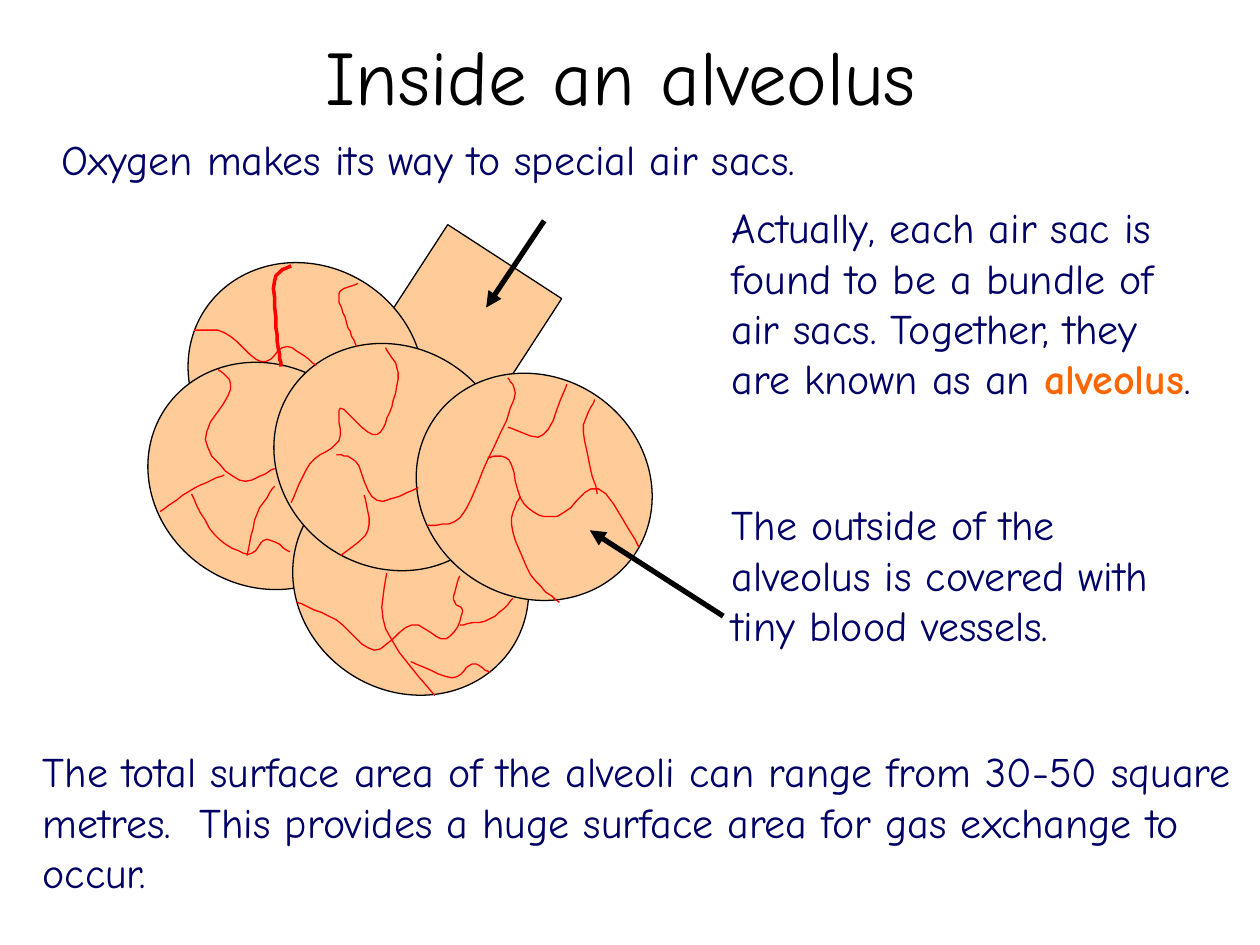
from lxml import etree
from pptx import Presentation
from pptx.dml.color import RGBColor
from pptx.enum.shapes import MSO_CONNECTOR, MSO_SHAPE
from pptx.enum.text import MSO_ANCHOR, MSO_AUTO_SIZE, PP_ALIGN
from pptx.oxml.ns import qn
from pptx.util import Cm, Pt

STRAIGHT = MSO_CONNECTOR.STRAIGHT
RECTANGLE, OVAL = MSO_SHAPE.RECTANGLE, MSO_SHAPE.OVAL
TOP, MIDDLE = MSO_ANCHOR.TOP, MSO_ANCHOR.MIDDLE
LEFT, CENTER = PP_ALIGN.LEFT, PP_ALIGN.CENTER
FIT_TEXT, FIXED = MSO_AUTO_SIZE.SHAPE_TO_FIT_TEXT, MSO_AUTO_SIZE.NONE

BLACK = RGBColor(0x00, 0x00, 0x00)
NAVY = RGBColor(0x01, 0x00, 0x66)
ORANGE = RGBColor(0xFF, 0x66, 0x00)
SKIN = RGBColor(0xFF, 0xCC, 0x99)
RED = RGBColor(0xFF, 0x00, 0x00)
FONT = "Comic Neue"
TILT = 33

# Boxes and points are in centimetres.
TITLE = ("Inside an alveolus", (1.09, -0.08, 22.86, 3.18))
INTRO = ("Oxygen makes its way to special air sacs.", (0.99, 2.57, 16.81, 1.3))
NOTES = [
    ("Actually, each air sac is found to be a bundle of air sacs. "
     "Together, they are known as an *alveolus*.", (14.5, 3.94, 9.8, 5.38)),
    ("The total surface area of the alveoli can range from 30-50 square metres.  "
     "This provides a huge surface area for gas exchange to occur.",
     (0.61, 14.91, 24.61, 3.33)),
    ("The outside of the alveolus is covered with tiny blood vessels.",
     (14.5, 9.93, 9.96, 3.33)),
]
AIRWAY = (7.54, 4.9, 2.74, 4.65)
SAC_SIZE = (4.88, 4.45)
SACS = [(3.73, 5.36), (2.92, 7.37), (5.84, 9.5), (5.46, 6.99), (8.33, 7.59)]
ARROWS = [((10.97, 4.45), (9.8, 6.2)), ((14.58, 12.42), (11.89, 10.69))]

# Points along each blood vessel, in units of VESSEL_UNIT; the first is the thick one.
VESSEL_UNIT = Cm(0.0254)
THICK, THIN = 2, 0.75
VESSELS = [
    [(231, 211), (218, 223), (220, 266), (223, 291)],
    [(154, 262), (178, 264), (207, 287), (228, 275), (251, 290)],
    [(284, 225), (269, 233), (275, 256), (283, 275)],
    [(306, 276), (316, 296), (309, 328), (296, 345), (270, 324), (269, 350),
     (246, 368), (231, 399)],
    [(267, 361), (282, 366), (299, 397), (332, 387)],
    [(270, 441), (292, 421), (289, 393)],
    [(173, 293), (183, 309), (163, 349), (190, 381), (218, 372)],
    [(178, 377), (155, 387), (127, 406)],
    [(152, 392), (170, 424), (197, 440), (212, 428), (230, 438)],
    [(196, 441), (204, 408), (218, 386)],
    [(235, 478), (267, 492), (297, 516), (327, 496), (354, 507), (367, 486),
     (360, 476), (365, 457)],
    [(307, 455), (306, 499), (345, 552)],
    [(326, 525), (359, 538), (375, 527), (389, 534)],
    [(365, 496), (389, 491), (407, 475)],
    [(339, 417), (365, 411), (383, 374), (408, 317), (403, 300)],
    [(387, 363), (404, 365), (416, 400), (442, 410), (475, 388), (507, 434)],
    [(474, 392), (463, 343), (472, 317)],
    [(403, 339), (431, 345), (450, 305)],
    [(413, 394), (406, 416), (421, 456), (444, 478)],
]


def smooth_path(knots, steps=6):
    """Return points on a Catmull-Rom curve through the knots."""
    padded = [knots[0], *knots, knots[-1]]
    path = [knots[0]]
    for corners in zip(padded, padded[1:], padded[2:], padded[3:]):
        for i in range(1, steps + 1):
            t = i / steps
            path.append(tuple(
                b + ((c - a) * t + (2 * a - 5 * b + 4 * c - d) * t ** 2
                     + (3 * b - a - 3 * c + d) * t ** 3) / 2
                for a, b, c, d in zip(*corners)))
    return path


def add_tissue(group, kind, box):
    shape = group.shapes.add_shape(kind, *map(Cm, box))
    shape.shadow.inherit = False
    shape.rotation = TILT
    shape.fill.solid()
    shape.fill.fore_color.rgb = SKIN
    shape.line.color.rgb = BLACK
    shape.line.width = Pt(0.75)


def add_vessel(group, knots, width):
    start, *rest = smooth_path(knots)
    builder = group.shapes.build_freeform(*start, scale=VESSEL_UNIT)
    builder.add_line_segments(rest, close=False)
    vessel = builder.convert_to_shape()
    vessel.shadow.inherit = False
    vessel.fill.background()
    vessel.line.color.rgb = RED
    vessel.line.width = Pt(width)


def add_arrow(s, start, end):
    arrow = s.shapes.add_connector(STRAIGHT, *map(Cm, start + end))
    arrow.line.color.rgb = BLACK
    arrow.line.width = Pt(3)
    properties = arrow.element.spPr
    etree.SubElement(properties.find(qn("a:ln")), qn("a:tailEnd"), type="triangle")
    etree.SubElement(properties, qn("a:effectLst"))


def add_text(s, text, box, size=24, color=NAVY, align=LEFT, anchor=TOP, wrap=True,
             fit=FIT_TEXT):
    """Add a text box; a part between asterisks is bold and orange."""
    tf = s.shapes.add_textbox(*map(Cm, box)).text_frame
    tf.word_wrap = wrap
    tf.auto_size = fit
    tf.vertical_anchor = anchor
    p = tf.paragraphs[0]
    p.alignment = align
    for i, part in enumerate(text.split("*")):
        key_term = i % 2 == 1
        r = p.add_run()
        r.text = part
        r.font.name = FONT
        r.font.size = Pt(size)
        r.font.bold = key_term
        r.font.color.rgb = ORANGE if key_term else color


def main():
    prs = Presentation()
    prs.slide_width, prs.slide_height = Cm(25.4), Cm(19.05)
    s = prs.slides.add_slide(prs.slide_layouts[6])

    alveolus = s.shapes.add_group_shape()
    add_tissue(alveolus, RECTANGLE, AIRWAY)
    for corner in SACS:
        add_tissue(alveolus, OVAL, corner + SAC_SIZE)
    for i, knots in enumerate(VESSELS):
        add_vessel(alveolus, knots, THIN if i else THICK)

    for text, box in NOTES:
        add_text(s, text, box)
    add_text(s, *INTRO, wrap=False)
    add_text(s, *TITLE, size=44, color=BLACK, align=CENTER, anchor=MIDDLE, fit=FIXED)
    for start, end in ARROWS:
        add_arrow(s, start, end)

    prs.save("out.pptx")


if __name__ == "__main__":
    main()
